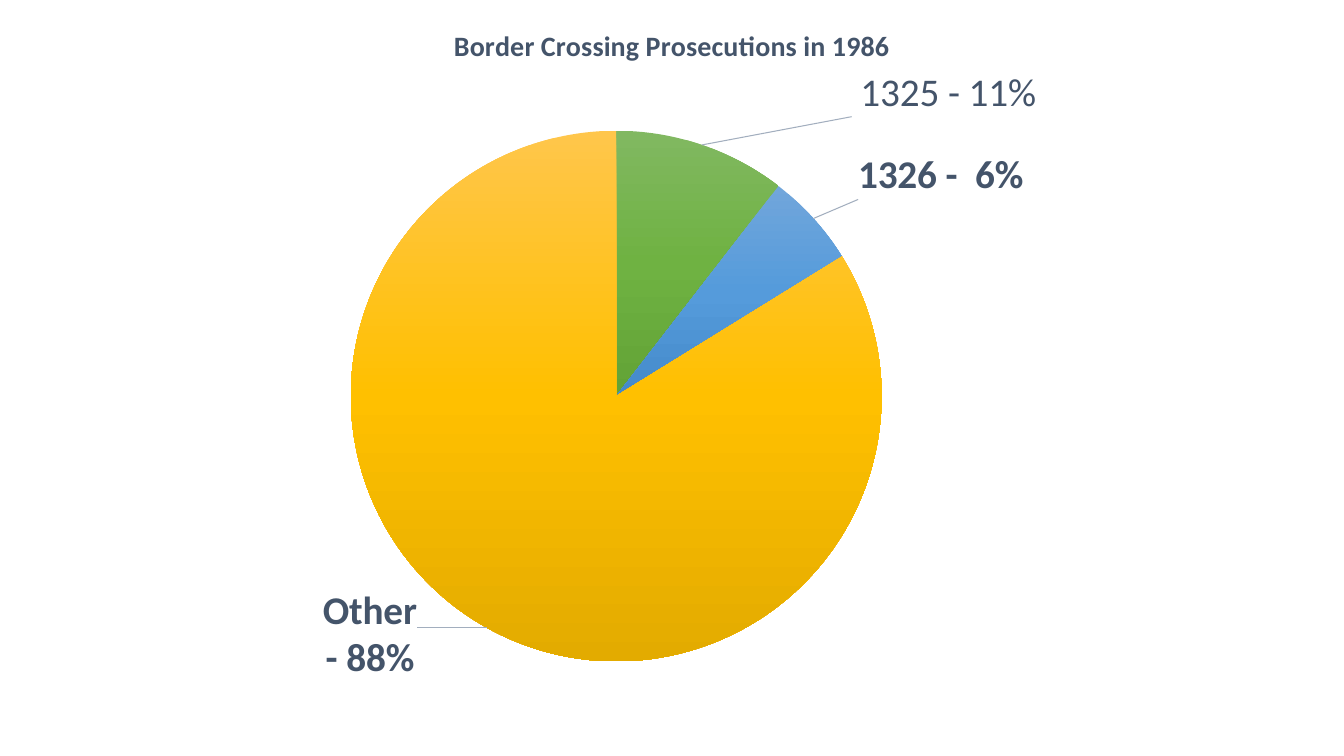
from lxml.etree import SubElement
from pptx import Presentation
from pptx.chart.data import CategoryChartData
from pptx.dml.color import RGBColor
from pptx.enum.chart import XL_CHART_TYPE, XL_LABEL_POSITION
from pptx.oxml import parse_xml
from pptx.oxml.ns import nsdecls, qn
from pptx.util import Inches, Pt

HUES = {
    "ink": "44546A",
    "rule": "A2AEBE",
    "green": ("81B861", "6FB242", "62A336"),
    "blue": ("71A6DB", "559BDB", "448ACA"),
    "gold": ("FFC64B", "FFC000", "E3AB00"),
}
FONT = "Calibri"
TITLE = "Border Crossing Prosecutions in 1986"
SLICES = [
    ("1", 0.11, "green", " 1325 - 11%", False, (0.11, -0.03)),
    ("2", 0.06, "blue", "1326 -  6%", True, (0.03, -0.02)),
    ("3", 0.88, "gold", "Other\n- 88%", True, (-0.05, -0.06)),
]


def write(frame, text, size=28, bold=True, color="ink"):
    frame.text = text
    for para in frame.paragraphs:
        for part in (para, *para.runs):
            font = part.font
            font.name, font.size, font.bold = FONT, Pt(size), bold
            font.color.rgb = RGBColor.from_string(HUES[color])


def place(**shares):
    layout = parse_xml(f"<c:layout {nsdecls('c')}><c:manualLayout/></c:layout>")
    for tag, val in shares.items():
        SubElement(layout[0], qn(f"c:{tag}")).set("val", str(val))
    return layout


def shade(point, hue):
    stops = "".join(
        f'<a:gs pos="{n * 50000}"><a:srgbClr val="{tone}"/></a:gs>'
        for n, tone in enumerate(HUES[hue])
    )
    point.format.line.fill.background()
    props = point.format.line._get_or_add_ln().getparent()
    props.insert(0, parse_xml(
        f'<a:gradFill {nsdecls("a")} rotWithShape="1"><a:gsLst>{stops}</a:gsLst>'
        '<a:lin ang="5400000" scaled="0"/></a:gradFill>'
    ))


def tag(point, text, bold, shift):
    label = point.data_label
    write(label.text_frame, text, bold=bold)
    label.position = XL_LABEL_POSITION.OUTSIDE_END
    node = label._get_or_add_dLbl()
    node.find(qn("c:idx")).addnext(place(x=shift[0], y=shift[1]))


def lead(series):
    labels = series.data_labels
    labels.number_format, labels.number_format_is_linked = "0%", False
    labels.show_value = True
    labels.position = XL_LABEL_POSITION.OUTSIDE_END
    node = labels._element
    flag = node.find(qn("c:showLeaderLines"))
    if flag is None:
        flag = SubElement(node, qn("c:showLeaderLines"))
    flag.set("val", "1")
    flag.addnext(parse_xml(
        f'<c:leaderLines {nsdecls("c", "a")}><c:spPr><a:ln w="9525"><a:solidFill>'
        f'<a:srgbClr val="{HUES["rule"]}"/></a:solidFill></a:ln></c:spPr></c:leaderLines>'
    ))


def draw_pie(slide, left, top, width, height):
    data = CategoryChartData(number_format="0%")
    data.categories = [row[0] for row in SLICES]
    data.add_series("", [row[1] for row in SLICES])
    chart = slide.shapes.add_chart(
        XL_CHART_TYPE.PIE, left, top, width, height, data
    ).chart
    chart.font.name, chart.font.size = FONT, Pt(10)
    chart.has_legend = False
    chart.has_title = True
    write(chart.chart_title.text_frame, TITLE, size=20)
    chart.chart_title.include_in_layout = False

    plot = chart.plots[0]
    plot.vary_by_categories = True
    area = plot._element.getparent()
    for old in area.findall(qn("c:layout")):
        area.remove(old)
    area.insert(0, place(layoutTarget="inner", xMode="edge", yMode="edge",
                         x=0.261, y=0.173, w=0.395, h=0.702))
    series = plot.series[0]
    for n, (_, _, hue, text, bold, shift) in enumerate(SLICES):
        shade(series.points[n], hue)
        tag(series.points[n], text, bold, shift)
    lead(series)


def main():
    deck = Presentation()
    deck.slide_width, deck.slide_height = Inches(13.33), Inches(7.5)
    slide = deck.slides.add_slide(deck.slide_layouts[6])
    draw_pie(slide, 0, 0, deck.slide_width, deck.slide_height)
    deck.save("out.pptx")


if __name__ == "__main__":
    main()
